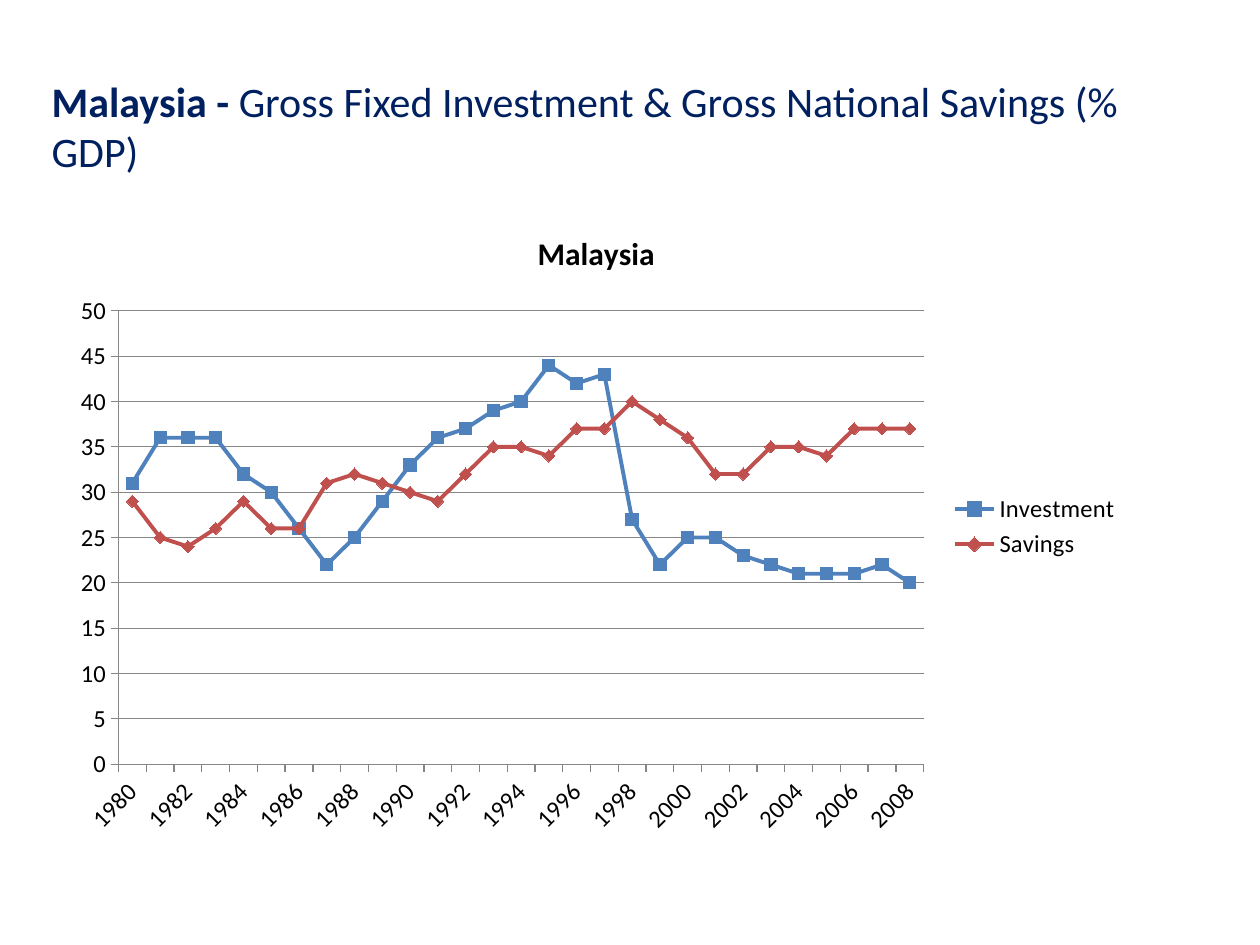
from lxml.etree import SubElement
from pptx import Presentation
from pptx.chart.data import CategoryChartData
from pptx.dml.color import RGBColor
from pptx.enum.chart import (
    XL_CHART_TYPE as ChartType,
    XL_LEGEND_POSITION as LegendPosition,
    XL_MARKER_STYLE as MarkerStyle,
    XL_TICK_MARK as TickMark,
)
from pptx.oxml import parse_xml
from pptx.oxml.ns import nsdecls, qn
from pptx.util import Pt

FONT = "Calibri"
GRAY = "868686"
YEARS = range(1980, 2009)
SERIES = {
    "Investment": dict(
        color="4F81BD",
        marker=MarkerStyle.SQUARE,
        values=[31, 36, 36, 36, 32, 30, 26, 22, 25, 29, 33, 36, 37, 39, 40,
                44, 42, 43, 27, 22, 25, 25, 23, 22, 21, 21, 21, 22, 20],
    ),
    "Savings": dict(
        color="C0504D",
        marker=MarkerStyle.DIAMOND,
        values=[29, 25, 24, 26, 29, 26, 26, 31, 32, 31, 30, 29, 32, 35, 35,
                34, 37, 37, 40, 38, 36, 32, 32, 35, 35, 34, 37, 37, 37],
    ),
}
PLOT_LAYOUT = {"x": 0.055, "y": 0.163, "w": 0.75, "h": 0.708}


def rgb(color):
    return RGBColor.from_string(color)


def set_attributes(target, values):
    for name, value in values.items():
        setattr(target, name, value)


def format_font(font, size, color="000000", bold=False):
    set_attributes(font, {"name": FONT, "size": Pt(size), "bold": bold})
    font.color.rgb = rgb(color)


def format_line(line, color, width):
    line.color.rgb = rgb(color)
    line.width = Pt(width)


def add_heading(slide, spans, left, top, width, height):
    box = slide.shapes.add_textbox(Pt(left), Pt(top), Pt(width), Pt(height))
    box.text_frame.word_wrap = True
    para = box.text_frame.paragraphs[0]
    for text, bold in spans:
        span = para.add_run()
        span.text = text
        format_font(span.font, 24, "002060", bold)


def add_line_chart(slide, left, top, width, height):
    data = CategoryChartData()
    data.categories = [str(year) for year in YEARS]
    for name, series in SERIES.items():
        data.add_series(name, series["values"])
    frame = slide.shapes.add_chart(
        ChartType.LINE_MARKERS, Pt(left), Pt(top), Pt(width), Pt(height), data
    )
    return frame.chart


def format_series(chart):
    chart.plots[0].vary_by_categories = False
    for series in chart.plots[0].series:
        look = SERIES[series.name]
        series.smooth = False
        format_line(series.format.line, look["color"], 2.25)
        set_attributes(series.marker, {"style": look["marker"], "size": 7})
        series.marker.format.fill.solid()
        series.marker.format.fill.fore_color.rgb = rgb(look["color"])
        format_line(series.marker.format.line, look["color"], 0.75)


def format_axis(axis, values):
    set_attributes(axis, values)
    axis.major_tick_mark = TickMark.OUTSIDE
    axis.minor_tick_mark = TickMark.NONE
    format_font(axis.tick_labels.font, 14)
    format_line(axis.format.line, GRAY, 0.75)


def slant_alternate_labels(axis):
    element = axis._element
    element.find(qn("c:txPr")).find(qn("a:bodyPr")).set("rot", "-2700000")
    last = element.find(qn("c:noMultiLvlLbl"))
    for tag, step in (("tickLblSkip", 2), ("tickMarkSkip", 1)):
        last.addprevious(parse_xml(f'<c:{tag} {nsdecls("c")} val="{step}"/>'))


def place_plot(chart):
    area = chart._chartSpace.chart.plotArea
    for old in area.findall(qn("c:layout")):
        area.remove(old)
    layout = parse_xml(f'<c:layout {nsdecls("c")}/>')
    area.insert(0, layout)
    manual = SubElement(layout, qn("c:manualLayout"))
    settings = {"layoutTarget": "inner", "xMode": "edge", "yMode": "edge"}
    for tag, value in {**settings, **PLOT_LAYOUT}.items():
        SubElement(manual, qn(f"c:{tag}")).set("val", str(value))


def format_title_and_legend(chart):
    chart.has_title = True
    chart.chart_title.include_in_layout = False
    title = chart.chart_title.text_frame
    title.text = "Malaysia"
    format_font(title.paragraphs[0].runs[0].font, 18, bold=True)
    chart.has_legend = True
    set_attributes(
        chart.legend,
        {"position": LegendPosition.RIGHT, "include_in_layout": False},
    )
    format_font(chart.legend.font, 14)


def main():
    deck = Presentation()
    set_attributes(deck, {"slide_width": Pt(720), "slide_height": Pt(540)})
    slide = deck.slides.add_slide(deck.slide_layouts[6])
    heading = [
        ("Malaysia - ", True),
        ("Gross Fixed Investment & Gross National Savings (% GDP)", False),
    ]
    add_heading(slide, heading, 22.5, 39.6, 664, 65.4)

    chart = add_line_chart(slide, 34, 118, 613.5, 366)
    format_font(chart.font, 10)
    format_title_and_legend(chart)
    format_series(chart)
    format_axis(chart.category_axis, {"has_major_gridlines": False})
    slant_alternate_labels(chart.category_axis)
    format_axis(
        chart.value_axis,
        {"minimum_scale": 0, "maximum_scale": 50, "major_unit": 5,
         "has_major_gridlines": True},
    )
    format_line(chart.value_axis.major_gridlines.format.line, GRAY, 0.75)
    place_plot(chart)
    deck.save("out.pptx")


if __name__ == "__main__":
    main()
